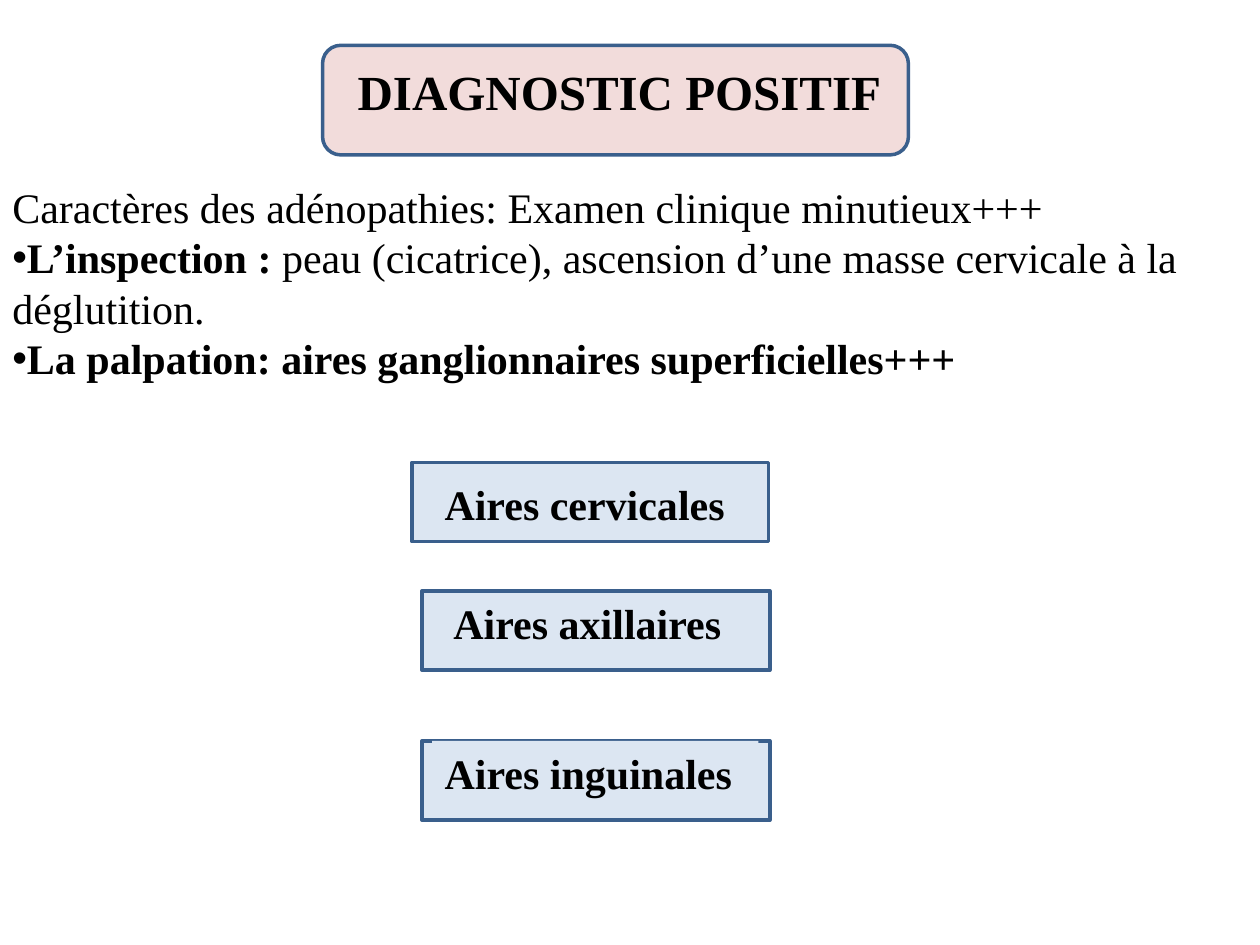
from lxml import etree
from pptx import Presentation
from pptx.dml.color import RGBColor
from pptx.enum.shapes import MSO_SHAPE
from pptx.enum.text import MSO_ANCHOR, PP_ALIGN
from pptx.oxml.ns import qn
from pptx.util import Inches, Pt

COLORS = {"text": "000000", "area": "DCE6F2", "title": "F2DCDB", "border": "3A5F8C"}
FONT = "Times New Roman"


def color(name):
    return RGBColor.from_string(COLORS[name])


def place(box):
    return [Inches(value) for value in box]


def style(para, size, bold=None):
    para.font.name = FONT
    para.font.size = Pt(size)
    para.font.bold = bold
    para.font.color.rgb = color("text")


def add_bullet(para):
    props = para._p.get_or_add_pPr()
    props.set("marL", "0")
    props.set("indent", "0")
    etree.SubElement(props, qn("a:buFont")).set("typeface", "Arial")
    etree.SubElement(props, qn("a:buChar")).set("char", "•")


def add_panel(page, kind, box, fill):
    panel = page.shapes.add_shape(kind, *place(box))
    panel.shadow.inherit = False
    panel.fill.solid()
    panel.fill.fore_color.rgb = color(fill)
    panel.line.color.rgb = color("border")
    panel.line.width = Pt(2)


def add_title(page, box):
    left, top, width, height = box
    add_panel(page, MSO_SHAPE.ROUNDED_RECTANGLE, box, "title")
    title = page.shapes.title
    title.element.getparent().append(title.element)
    title.left, title.top, title.width, title.height = place(
        (left + 0.11, top + 0.08, width - 0.16, 0.57))
    frame = title.text_frame
    frame.text = "DIAGNOSTIC POSITIF"
    frame.word_wrap = False
    frame.vertical_anchor = MSO_ANCHOR.TOP
    para = frame.paragraphs[0]
    para.alignment = PP_ALIGN.CENTER
    style(para, 28, True)


def add_findings(page, box):
    frame = page.shapes.add_textbox(*place(box)).text_frame
    frame.word_wrap = True
    findings = [
        (False, [("Caractères des adénopathies: Examen clinique minutieux+++", False)]),
        (True, [("L’inspection\u00a0:", True),
                (" peau (cicatrice), ascension d’une masse cervicale à la déglutition.", False)]),
        (True, [("La palpation:\u00a0aires ganglionnaires\u00a0superficielles+++", True)]),
    ]
    for index, (bulleted, spans) in enumerate(findings):
        para = frame.add_paragraph() if index else frame.paragraphs[0]
        if bulleted:
            add_bullet(para)
        style(para, 24)
        for text, bold in spans:
            span = para.add_run()
            span.text = text
            span.font.bold = bold


def add_area(page, box, text, offset, label_width, filled=False):
    left, top, width, height = box
    add_panel(page, MSO_SHAPE.RECTANGLE, box, "area")
    label = page.shapes.add_textbox(
        *place((left + offset[0], top + offset[1], label_width, 0.5)))
    if filled:
        label.fill.solid()
        label.fill.fore_color.rgb = color("area")
    frame = label.text_frame
    frame.word_wrap = False
    frame.text = text
    style(frame.paragraphs[0], 24, True)


def main():
    deck = Presentation()
    deck.slide_width, deck.slide_height = Inches(10), Inches(7.5)
    page = deck.slides.add_slide(deck.slide_layouts[5])
    add_title(page, (2.56, 0.36, 4.65, 0.87))
    add_findings(page, (0, 1.39, 9.8, 2.12))
    add_area(page, (3.27, 3.67, 2.83, 0.63), "Aires cervicales", (0.16, 0.08), 2.53)
    add_area(page, (3.35, 4.69, 2.76, 0.63), "Aires axillaires", (0.15, 0), 2.43)
    add_area(page, (3.35, 5.88, 2.76, 0.63), "Aires inguinales", (0.08, 0), 2.59, filled=True)
    deck.save("out.pptx")


if __name__ == "__main__":
    main()
